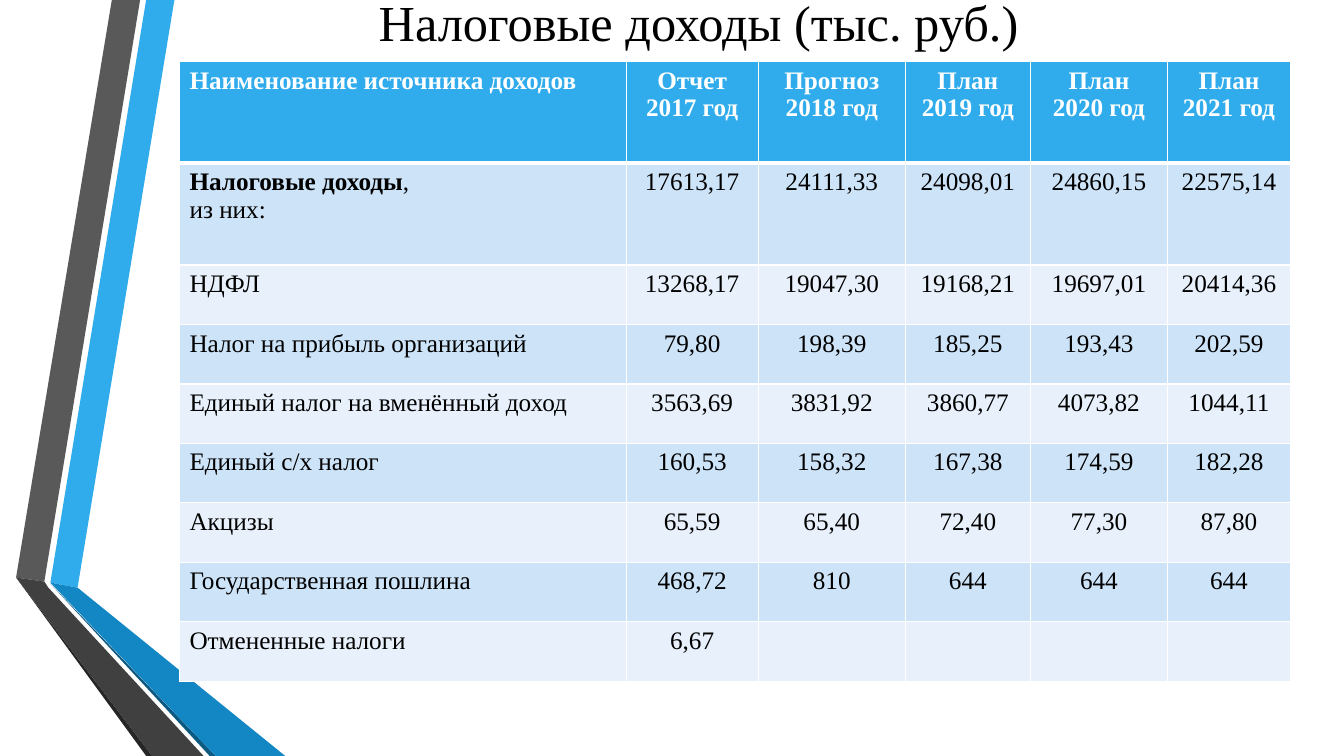
from lxml.etree import SubElement
from pptx import Presentation
from pptx.dml.color import RGBColor
from pptx.enum.text import MSO_ANCHOR, MSO_AUTO_SIZE, PP_ALIGN
from pptx.oxml.ns import qn
from pptx.util import Inches, Pt


def color(hex_value):
    return RGBColor.from_string(hex_value)


def write(para, text, size=18, bold=False, fill="000000", align=PP_ALIGN.LEFT):
    """Add one formatted span to a paragraph."""
    para.alignment = align
    span = para.add_run()
    span.text = text
    span.font.name = "Times New Roman"
    span.font.size = Pt(size)
    span.font.bold = bold
    span.font.color.rgb = color(fill)


deck = Presentation()
deck.slide_width = Inches(13.33)
deck.slide_height = Inches(7.5)
page = deck.slides.add_slide(deck.slide_layouts[5])

# Folded ribbons along the left edge, from back to front
ribbons = [
    ("30ACEC", [(0.5, 5.78), (0.77, 5.83), (1.73, 0), (1.45, 0)]),
    ("595959", [(1.39, 0), (1.11, 0), (0.16, 5.73), (0.44, 5.77)]),
    ("262626", [(0.16, 5.73), (1.45, 7.5), (1.51, 7.5)]),
    ("0C5A82", [(0.5, 5.79), (2.08, 7.5), (2.14, 7.5)]),
    ("1287C3", [(0.5, 5.78), (2.14, 7.5), (2.83, 7.5), (0.77, 5.83)]),
    ("404040", [(2.02, 7.5), (0.48, 5.83), (0.44, 5.77), (0.16, 5.73), (1.51, 7.5)]),
]
for fill, corners in ribbons:
    points = [(Inches(x), Inches(y)) for x, y in corners]
    builder = page.shapes.build_freeform(*points[0])
    builder.add_line_segments(points[1:], close=True)
    ribbon = builder.convert_to_shape()
    ribbon.shadow.inherit = False
    ribbon.fill.solid()
    ribbon.fill.fore_color.rgb = color(fill)
    ribbon.line.fill.background()

title = page.shapes.title
title.left, title.top = Inches(1.45), Inches(0)
title.width, title.height = Inches(10.96), Inches(0.43)
title.text_frame.auto_size = MSO_AUTO_SIZE.NONE
title.text_frame.vertical_anchor = MSO_ANCHOR.MIDDLE
write(title.text_frame.paragraphs[0], "Налоговые доходы (тыс. руб.)",
      size=36, align=PP_ALIGN.CENTER)

rows = [
    ["Наименование источника доходов", "Отчет 2017 год", "Прогноз 2018 год",
     "План 2019 год", "План 2020 год", "План 2021 год"],
    ["Налоговые доходы", "17613,17", "24111,33", "24098,01", "24860,15", "22575,14"],
    ["НДФЛ", "13268,17", "19047,30", "19168,21", "19697,01", "20414,36"],
    ["Налог на прибыль организаций", "79,80", "198,39", "185,25", "193,43", "202,59"],
    ["Единый налог на вменённый доход", "3563,69", "3831,92", "3860,77", "4073,82", "1044,11"],
    ["Единый с/х налог", "160,53", "158,32", "167,38", "174,59", "182,28"],
    ["Акцизы", "65,59", "65,40", "72,40", "77,30", "87,80"],
    ["Государственная пошлина", "468,72", "810", "644", "644", "644"],
    ["Отмененные налоги", "6,67", "", "", "", ""],
]
column_widths = [4.43, 1.31, 1.46, 1.24, 1.36, 1.22]
row_heights = [1.01] * 2 + [0.59] * 7

table = page.shapes.add_table(len(rows), len(column_widths), Inches(1.78), Inches(0.61),
                              Inches(11.02), Inches(6.13)).table
for column, width in zip(table.columns, column_widths):
    column.width = Inches(width)
for row, height in zip(table.rows, row_heights):
    row.height = Inches(height)

for row_index, values in enumerate(rows):
    is_header = row_index == 0
    row_fill = "30ACEC" if is_header else ("E8F1FB", "CDE3F8")[row_index % 2]
    for column_index, value in enumerate(values):
        cell = table.cell(row_index, column_index)
        properties = cell._tc.get_or_add_tcPr()
        for side in ("lnL", "lnR", "lnT", "lnB"):
            thick = (side == "lnB" and is_header) or (side == "lnT" and row_index == 1)
            border = SubElement(properties, qn(f"a:{side}"), w=str(Pt(3 if thick else 1)))
            border_fill = SubElement(border, qn("a:solidFill"))
            SubElement(border_fill, qn("a:srgbClr"), val="FFFFFF")
        cell.fill.solid()
        cell.fill.fore_color.rgb = color(row_fill)
        if value:
            is_total = row_index == 1 and column_index == 0
            write(cell.text_frame.paragraphs[0], value, bold=is_header or is_total,
                  fill="FFFFFF" if is_header else "000000",
                  align=PP_ALIGN.CENTER if column_index else PP_ALIGN.LEFT)

total_name = table.cell(1, 0).text_frame
write(total_name.paragraphs[0], ",")
write(total_name.add_paragraph(), "из них:")

deck.save("out.pptx")
